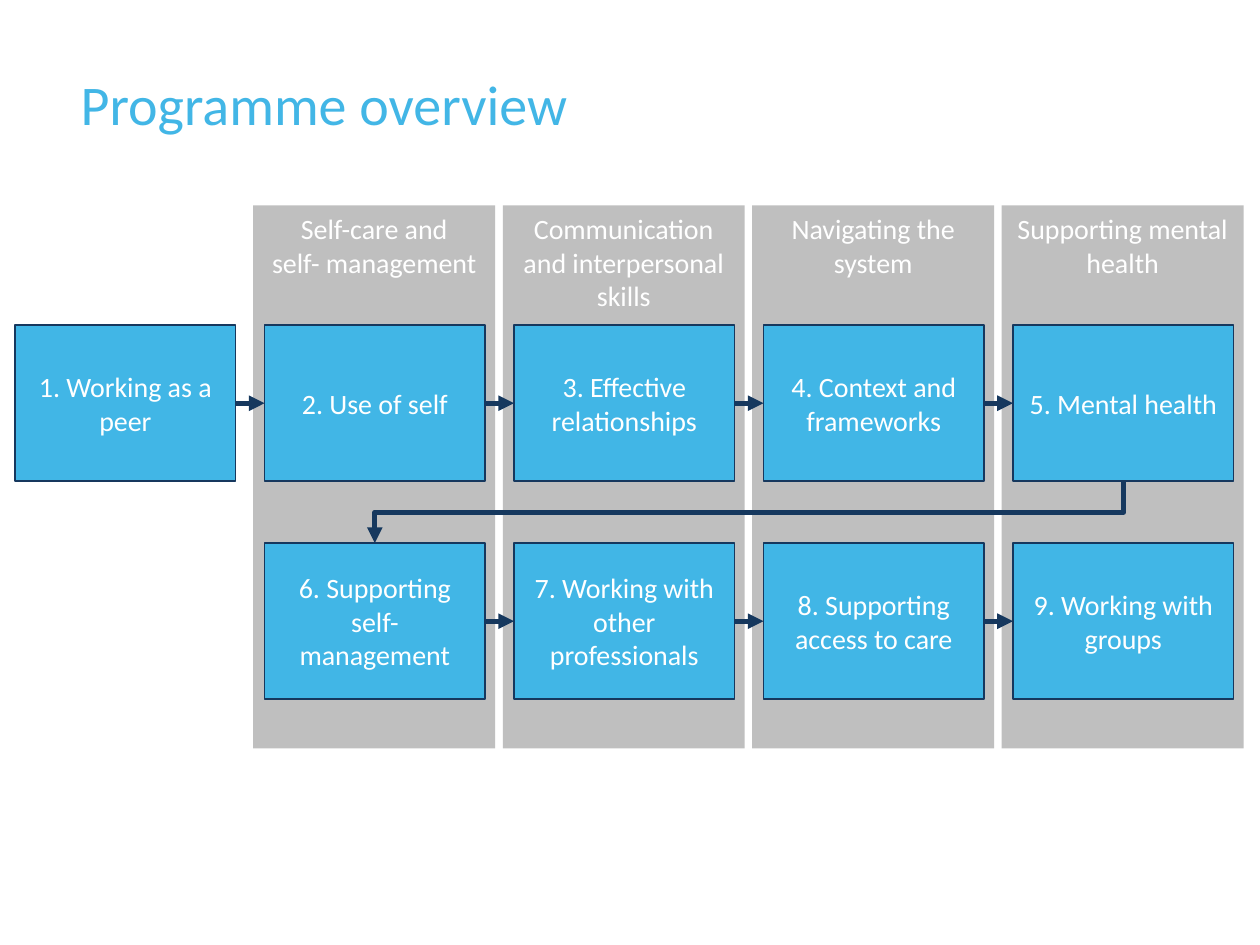
from dataclasses import dataclass
from lxml.etree import SubElement
from pptx import Presentation
from pptx.dml.color import RGBColor
from pptx.enum.shapes import MSO_CONNECTOR as Link, MSO_SHAPE as Preset
from pptx.enum.text import MSO_ANCHOR as Anchor, PP_ALIGN as Align
from pptx.oxml.ns import qn
from pptx.util import Inches, Pt


@dataclass(frozen=True)
class Theme:
    font: str = "Calibri"
    title: RGBColor = RGBColor(0x42, 0xB6, 0xE6)
    module: RGBColor = RGBColor(0x41, 0xB6, 0xE6)
    lane: RGBColor = RGBColor(0xBF, 0xBF, 0xBF)
    navy: RGBColor = RGBColor(0x16, 0x38, 0x5E)
    white: RGBColor = RGBColor(0xFF, 0xFF, 0xFF)
    title_size: Pt = Pt(32)
    label_size: Pt = Pt(16)
    border: Pt = Pt(1)
    arrow: Pt = Pt(3)


theme = Theme()
PITCH = Inches(1.98)
MODULE_LEFT, MODULE_W, MODULE_H = Inches(0.12), Inches(1.75), Inches(1.24)
ROW_TOPS = [Inches(2.58), Inches(4.31)]
LANE_LEFT, LANE_TOP = Inches(2.01), Inches(1.63)
LANE_W, LANE_H = Inches(1.92), Inches(4.31)

LANES = [
    "Self-care and\nself- management",
    "Communication and interpersonal skills",
    "Navigating the system",
    "Supporting mental health",
]
MODULE_ROWS = [
    (0, ["1. Working as a peer", "2. Use of self", "3. Effective relationships",
         "4. Context and frameworks", "5. Mental health"]),
    (1, ["6. Supporting self-management", "7. Working with other professionals",
         "8. Supporting access to care", "9. Working with groups"]),
]


def add_block(label, left, top, width, height, fill, anchor):
    block = slide.shapes.add_shape(Preset.RECTANGLE, left, top, width, height)
    block.shadow.inherit = False
    block.fill.solid()
    block.fill.fore_color.rgb = fill
    block.line.fill.background()
    frame = block.text_frame
    frame.word_wrap = True
    frame.vertical_anchor = anchor
    frame.text = label
    for paragraph in frame.paragraphs:
        paragraph.alignment = Align.CENTER
        for run in paragraph.runs:
            run.font.name = theme.font
            run.font.size = theme.label_size
            run.font.color.rgb = theme.white
    return block


def add_arrow(kind, x1, y1, x2, y2):
    arrow = slide.shapes.add_connector(kind, x1, y1, x2, y2)
    arrow.line.color.rgb = theme.navy
    arrow.line.width = theme.arrow
    SubElement(arrow.line._get_or_add_ln(), qn("a:tailEnd"), type="triangle")
    SubElement(arrow._element.spPr, qn("a:effectLst"))
    return arrow


prs = Presentation()
prs.slide_width, prs.slide_height = Inches(10), Inches(7.5)
slide = prs.slides.add_slide(prs.slide_layouts[5])

title = slide.shapes.title
title.left, title.top = Inches(0.54), Inches(0.56)
title.width, title.height = Inches(9.06), Inches(1.03)
title.text_frame.text = "Programme overview"
title.text_frame.vertical_anchor = Anchor.TOP
heading = title.text_frame.paragraphs[0]
heading.alignment = Align.LEFT
heading.line_spacing = 0.9
heading_font = heading.runs[0].font
heading_font.name = theme.font
heading_font.size = theme.title_size
heading_font.color.rgb = theme.title

for column, topic in enumerate(LANES):
    add_block(topic, LANE_LEFT + column * PITCH, LANE_TOP, LANE_W, LANE_H,
              theme.lane, Anchor.TOP)

rows = []
for (first_column, names), top in zip(MODULE_ROWS, ROW_TOPS):
    modules = []
    for column, name in enumerate(names, first_column):
        module = add_block(name, MODULE_LEFT + column * PITCH, top,
                           MODULE_W, MODULE_H, theme.module, Anchor.MIDDLE)
        module.line.color.rgb = theme.navy
        module.line.width = theme.border
        modules.append(module)
    rows.append(modules)

for modules in rows:
    for before, after in zip(modules, modules[1:]):
        middle = before.top + MODULE_H // 2
        step = add_arrow(Link.STRAIGHT, before.left + MODULE_W, middle, after.left, middle)
        step.begin_connect(before, 3)
        step.end_connect(after, 1)

last, following = rows[0][-1], rows[1][0]
drop = following.top - last.top - MODULE_H
span = last.left - following.left
center_x = (last.left + following.left + MODULE_W) // 2
center_y = following.top - drop // 2
turn = add_arrow(Link.ELBOW, center_x - drop // 2, center_y - span // 2,
                 center_x + drop // 2, center_y + span // 2)
turn._element.spPr.find(qn("a:xfrm")).set("rot", str(90 * 60000))

prs.save("out.pptx")
